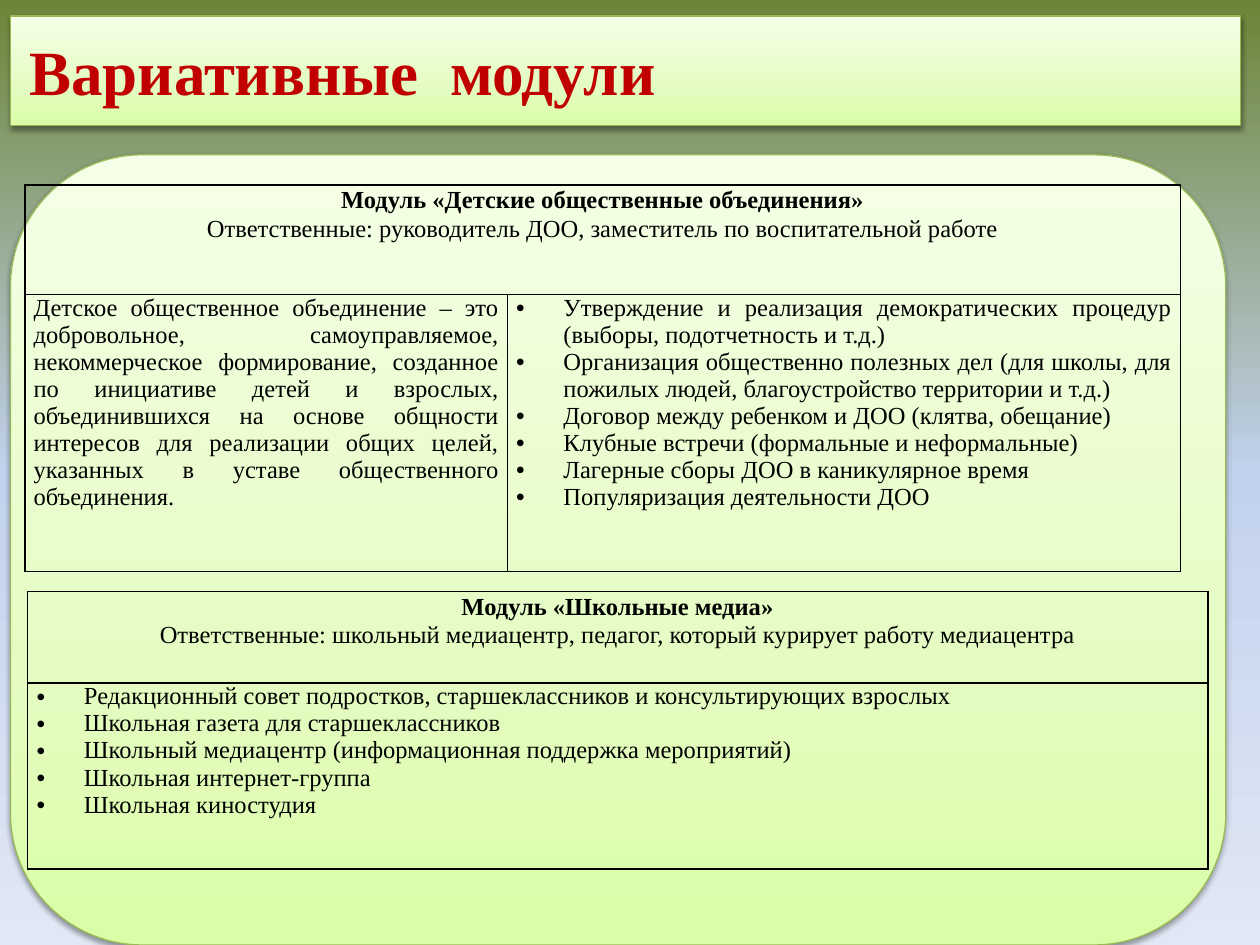
import pptx
import pptx.dml.color
import pptx.enum.shapes
import pptx.enum.text
import pptx.oxml
import pptx.oxml.ns
import pptx.util
from lxml import etree

Pt = pptx.util.Pt
qn = pptx.oxml.ns.qn
ALIGN = pptx.enum.text.PP_ALIGN
ANCHOR = pptx.enum.text.MSO_ANCHOR


def color(value):
    return pptx.dml.color.RGBColor.from_string(value)


def add_xml(parent, tag, **attributes):
    return etree.SubElement(parent, qn(tag), attributes)


def add_hex(parent, value):
    return add_xml(parent, "a:srgbClr", val=value)


class SlideBuilder:
    FONT = "Times New Roman"
    TEXT = "000000"
    TITLE = "C00000"
    OUTLINE = "98B955"
    BACKGROUND = [(0, "6B8537"), (50, "C2D1ED"), (100, "E1E8F5")]
    PANEL = [(0, "DAFDA7"), (35, "E4FCC2"), (100, "F5FFE7")]
    BODY_SIZE = 14
    BULLET_INDENT = 27

    def __init__(self, deck):
        self.page = deck.slides.add_slide(deck.slide_layouts[5])

    def gradient(self, fill, element, stops, angle):
        """Fill with any number of (percent, colour) stops; angle is counterclockwise."""
        fill.gradient()
        fill.gradient_angle = angle
        stop_list = element.find(".//" + qn("a:gsLst"))
        for stop in list(stop_list):
            stop_list.remove(stop)
        for percent, value in stops:
            add_hex(add_xml(stop_list, "a:gs", pos=str(percent * 1000)), value)

    def background(self):
        self.gradient(self.page.background.fill, self.page.element, self.BACKGROUND, 270)

    def font(self, para, size, value, bold=False):
        para.font.name = self.FONT
        para.font.size = Pt(size)
        para.font.bold = bold
        para.font.color.rgb = color(value)

    def style_panel(self, shape):
        """Give the shape the green gradient, outline and soft shadow."""
        self.gradient(shape.fill, shape.element.spPr, self.PANEL, 90)
        shape.line.color.rgb = color(self.OUTLINE)
        shape.line.width = Pt(0.75)
        shape.shadow.inherit = False
        effects = shape.element.spPr.find(qn("a:effectLst"))
        shadow = add_xml(effects, "a:outerShdw", blurRad=str(Pt(3.1)), dist=str(Pt(1.6)),
                         dir="5400000", rotWithShape="0")
        add_xml(add_hex(shadow, "000000"), "a:alpha", val="38000")

    def title(self, text, left, top, width, height):
        title = self.page.shapes.title
        title.left, title.top, title.width, title.height = map(Pt, (left, top, width, height))
        outline = add_xml(title.element.spPr, "a:prstGeom", prst="roundRect")
        add_xml(outline, "a:avLst")
        self.style_panel(title)
        frame = title.text_frame
        frame.text = text
        frame.word_wrap = True
        frame.auto_size = pptx.enum.text.MSO_AUTO_SIZE.NONE
        frame.vertical_anchor = ANCHOR.MIDDLE
        para = frame.paragraphs[0]
        para.alignment = ALIGN.LEFT
        para.space_before = Pt(7)
        properties = para._p.get_or_add_pPr()
        properties.set("marL", str(Pt(3.6)))
        properties.set("indent", "0")
        self.font(para, 36, self.TITLE, bold=True)

    def panel(self, left, top, width, height):
        shape = self.page.shapes.add_shape(
            pptx.enum.shapes.MSO_SHAPE.ROUNDED_RECTANGLE, *map(Pt, (left, top, width, height)))
        self.style_panel(shape)

    def table(self, left, top, widths, heights, margin):
        frame = self.page.shapes.add_table(
            len(heights), len(widths), Pt(left), Pt(top), Pt(sum(widths)), Pt(sum(heights)))
        table = frame.table
        table.first_row = table.horz_banding = False
        for column, width in zip(table.columns, widths):
            column.width = Pt(width)
        for row, height in zip(table.rows, heights):
            row.height = Pt(height)
        for cell in table.iter_cells():
            cell.margin_left = cell.margin_right = Pt(margin)
            cell.margin_top = cell.margin_bottom = 0
            self.borders(cell)
            cell.fill.background()
        return table

    def borders(self, cell):
        properties = cell._tc.get_or_add_tcPr()
        for side in ("a:lnL", "a:lnR", "a:lnT", "a:lnB"):
            line = add_xml(properties, side, w=str(Pt(1)))
            add_hex(add_xml(line, "a:solidFill"), self.TEXT)

    def paragraphs(self, cell, texts):
        cell.text_frame.text = "\n".join(texts)
        return cell.text_frame.paragraphs

    def heading(self, cell, name, people):
        for para, bold in zip(self.paragraphs(cell, [name, people]), (True, False)):
            para.alignment = ALIGN.CENTER
            para.line_spacing = 1.07
            self.font(para, self.BODY_SIZE, self.TEXT, bold)

    def body(self, cell, texts, bullets=True):
        for para in self.paragraphs(cell, texts):
            para.alignment = ALIGN.JUSTIFY
            if bullets:
                properties = para._p.get_or_add_pPr()
                properties.set("marL", str(Pt(self.BULLET_INDENT)))
                properties.set("indent", str(-Pt(self.BULLET_INDENT)))
                add_xml(properties, "a:buFont", typeface="Arial")
                add_xml(properties, "a:buChar", char="•")
            self.font(para, self.BODY_SIZE, self.TEXT)


def main():
    deck = pptx.Presentation()
    deck.slide_width, deck.slide_height = Pt(720), Pt(540)
    builder = SlideBuilder(deck)
    builder.background()
    builder.title("Вариативные  модули", 6, 9.2, 703, 62.5)
    builder.panel(6, 88.5, 694.5, 451.5)

    union = builder.table(14.2, 105.6, [275.8, 384.5], [62.6, 158.4], 5)
    union.cell(0, 0).merge(union.cell(0, 1))
    builder.heading(
        union.cell(0, 0), "Модуль «Детские общественные объединения»",
        "Ответственные: руководитель ДОО, заместитель по воспитательной работе")
    builder.body(union.cell(1, 0), [
        "Детское общественное объединение – это добровольное, самоуправляемое, "
        "некоммерческое формирование, созданное по инициативе детей и взрослых, "
        "объединившихся на основе общности интересов для реализации общих целей, "
        "указанных в уставе общественного объединения."], bullets=False)
    builder.body(union.cell(1, 1), [
        "Утверждение и реализация демократических процедур (выборы, подотчетность и т.д.)",
        "Организация общественно полезных дел (для школы, для пожилых людей, "
        "благоустройство территории и т.д.)",
        "Договор между ребенком и ДОО (клятва, обещание)",
        "Клубные встречи (формальные и неформальные)",
        "Лагерные сборы ДОО в каникулярное время",
        "Популяризация деятельности ДОО"])

    media = builder.table(15.6, 337.9, [674.6], [52.4, 106.4], 5.4)
    builder.heading(
        media.cell(0, 0), "Модуль «Школьные медиа»",
        "Ответственные: школьный медиацентр, педагог, который курирует работу медиацентра")
    builder.body(media.cell(1, 0), [
        "Редакционный совет подростков, старшеклассников и консультирующих взрослых",
        "Школьная газета для старшеклассников",
        "Школьный медиацентр (информационная поддержка мероприятий)",
        "Школьная интернет-группа",
        "Школьная киностудия"])
    deck.save("out.pptx")


if __name__ == "__main__":
    main()
